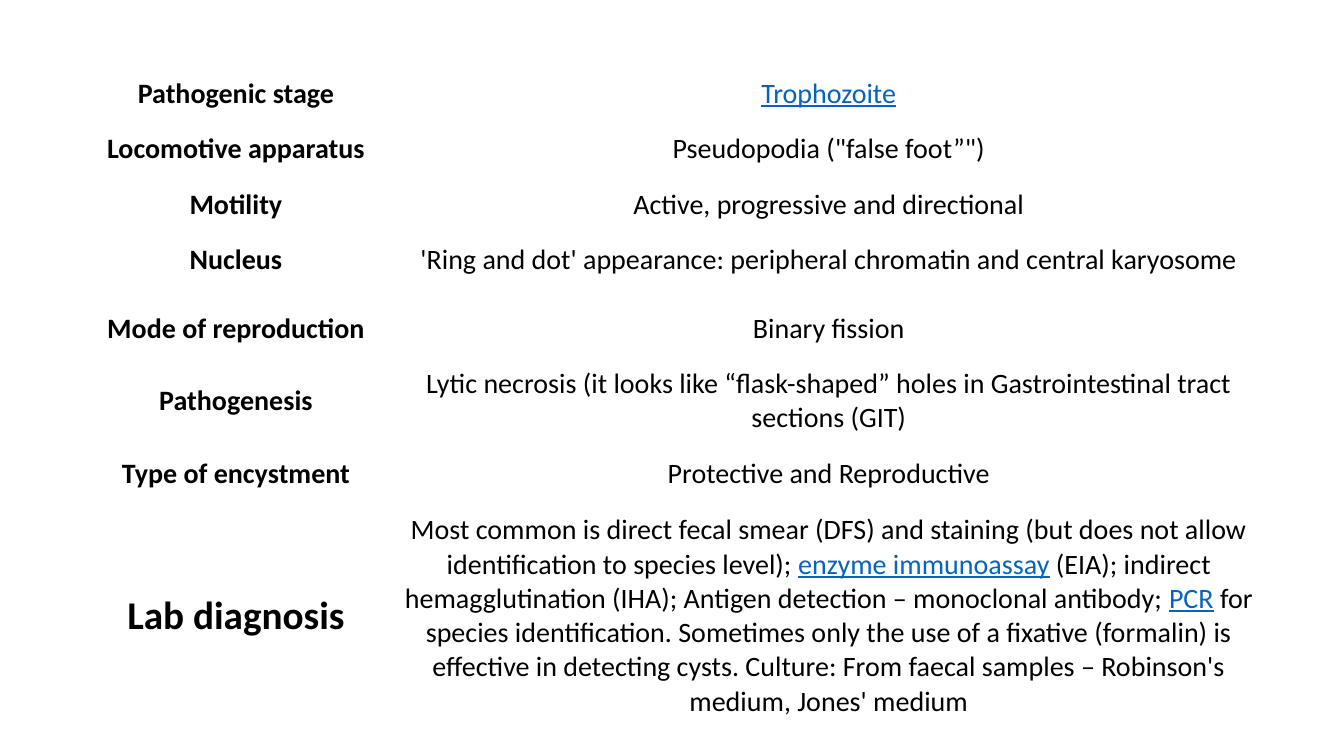
from dataclasses import dataclass

from pptx import Presentation
from pptx.dml.color import RGBColor
from pptx.enum.text import MSO_ANCHOR, PP_ALIGN
from pptx.table import Table, _Cell
from pptx.util import Emu, Pt

SCALE = 9144  # EMU per px, 100 px to the inch
COLORS = {"text": "000000", "link": "0563C1"}
FONT = {"name": "Calibri", "size": Pt(20), "bold": False, "underline": False}
CELL = {
    "margin_left": Emu(7 * SCALE),
    "margin_right": Emu(7 * SCALE),
    "margin_top": Emu(4 * SCALE),
    "margin_bottom": Emu(4 * SCALE),
    "vertical_anchor": MSO_ANCHOR.MIDDLE,
}
WIDTHS = (294, 882)


@dataclass(frozen=True)
class Piece:
    text: str
    link: bool = False


@dataclass(frozen=True)
class Trait:
    label: str
    body: tuple[Piece, ...]
    height: int = 68
    size: int = 20


TRAITS = (
    Trait("Pathogenic stage", (Piece("Trophozoite", link=True),), height=39),
    Trait("Locomotive apparatus", (Piece('Pseudopodia ("false foot”")'),)),
    Trait("Motility", (Piece("Active, progressive and directional"),), height=39),
    Trait("Nucleus", (Piece("'Ring and dot' appearance: peripheral chromatin and central karyosome"),)),
    Trait("Mode of reproduction", (Piece("Binary fission"),)),
    Trait("Pathogenesis", (
        Piece("Lytic necrosis (it looks like “flask-shaped” holes in "
              "Gastrointestinal tract sections (GIT)"),
    )),
    Trait("Type of encystment", (Piece("Protective and Reproductive"),)),
    Trait("Lab diagnosis", (
        Piece("Most common is direct fecal smear (DFS) and staining "
              "(but does not allow identification to species level); "),
        Piece("enzyme immunoassay", link=True),
        Piece(" (EIA); indirect hemagglutination (IHA); "
              "Antigen detection – monoclonal antibody; "),
        Piece("PCR", link=True),
        Piece(" for species identification. Sometimes only the use of a fixative "
              "(formalin) is effective in detecting cysts. Culture: From faecal "
              "samples – Robinson's medium, Jones' medium"),
    ), height=214, size=28),
)


def px(count: int) -> Emu:
    return Emu(count * SCALE)


def apply(target: object, values: dict) -> None:
    for name, value in values.items():
        setattr(target, name, value)


def fill_cell(cell: _Cell, body: tuple[Piece, ...], style: dict) -> None:
    cell.fill.background()
    apply(cell, CELL)
    para = cell.text_frame.paragraphs[0]
    para.alignment = PP_ALIGN.CENTER
    for piece in body:
        run = para.add_run()
        run.text = piece.text
        apply(run.font, FONT | style | {"underline": piece.link})
        color = COLORS["link" if piece.link else "text"]
        run.font.color.rgb = RGBColor.from_string(color)


def fill_row(table: Table, index: int, trait: Trait) -> None:
    table.rows[index].height = px(trait.height)
    bold = {"bold": True, "size": Pt(trait.size)}
    fill_cell(table.cell(index, 0), (Piece(trait.label),), bold)
    fill_cell(table.cell(index, 1), trait.body, {})


def main() -> None:
    deck = Presentation()
    apply(deck, {"slide_width": px(1333), "slide_height": px(750)})
    slide = deck.slides.add_slide(deck.slide_layouts[6])
    high = sum(trait.height for trait in TRAITS)
    frame = slide.shapes.add_table(
        len(TRAITS), len(WIDTHS), px(87), px(72), px(sum(WIDTHS)), px(high))
    table = frame.table
    apply(table, {"first_row": False, "horz_banding": False})
    for column, width in zip(table.columns, WIDTHS):
        column.width = px(width)
    for index, trait in enumerate(TRAITS):
        fill_row(table, index, trait)
    deck.save("out.pptx")


if __name__ == "__main__":
    main()
